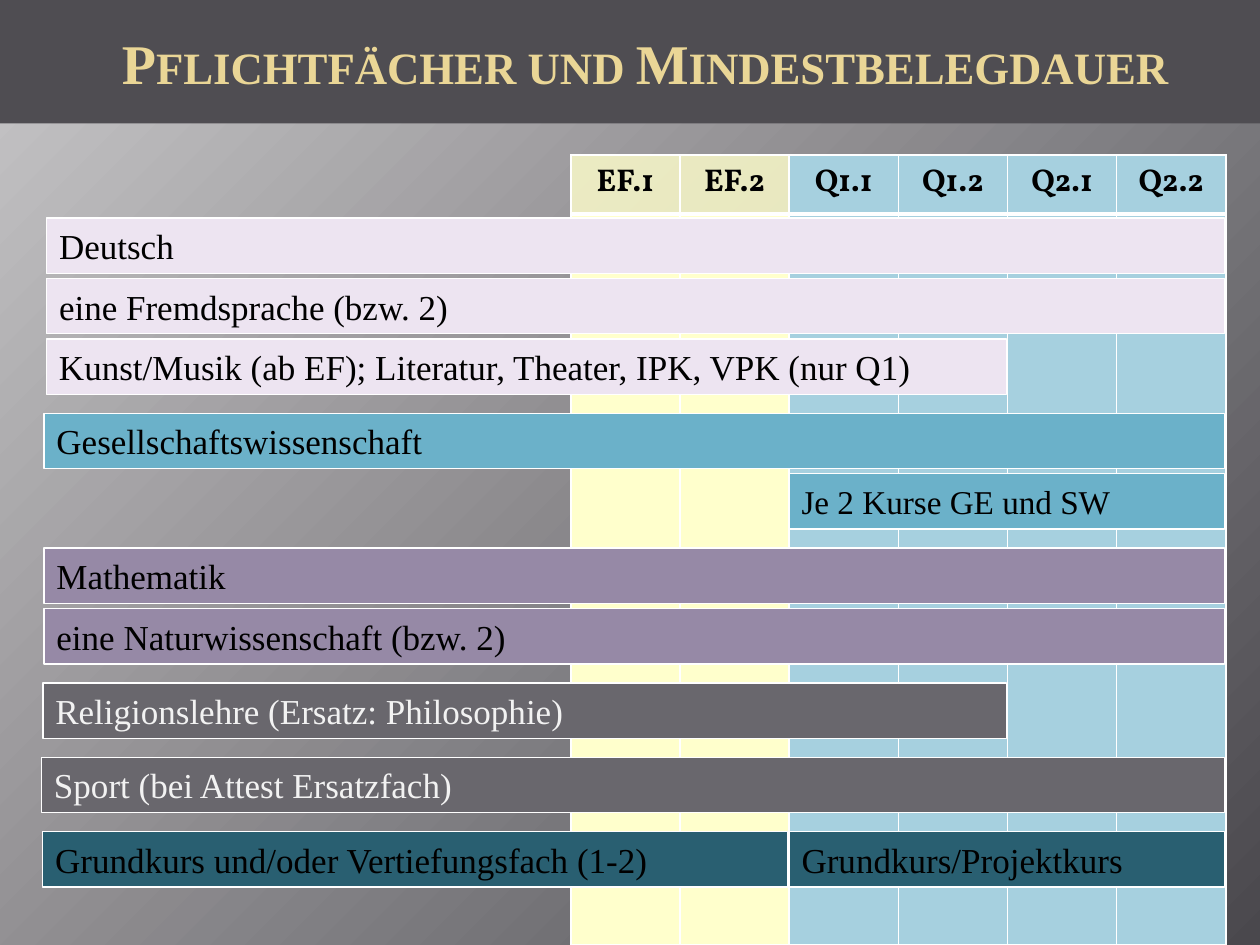
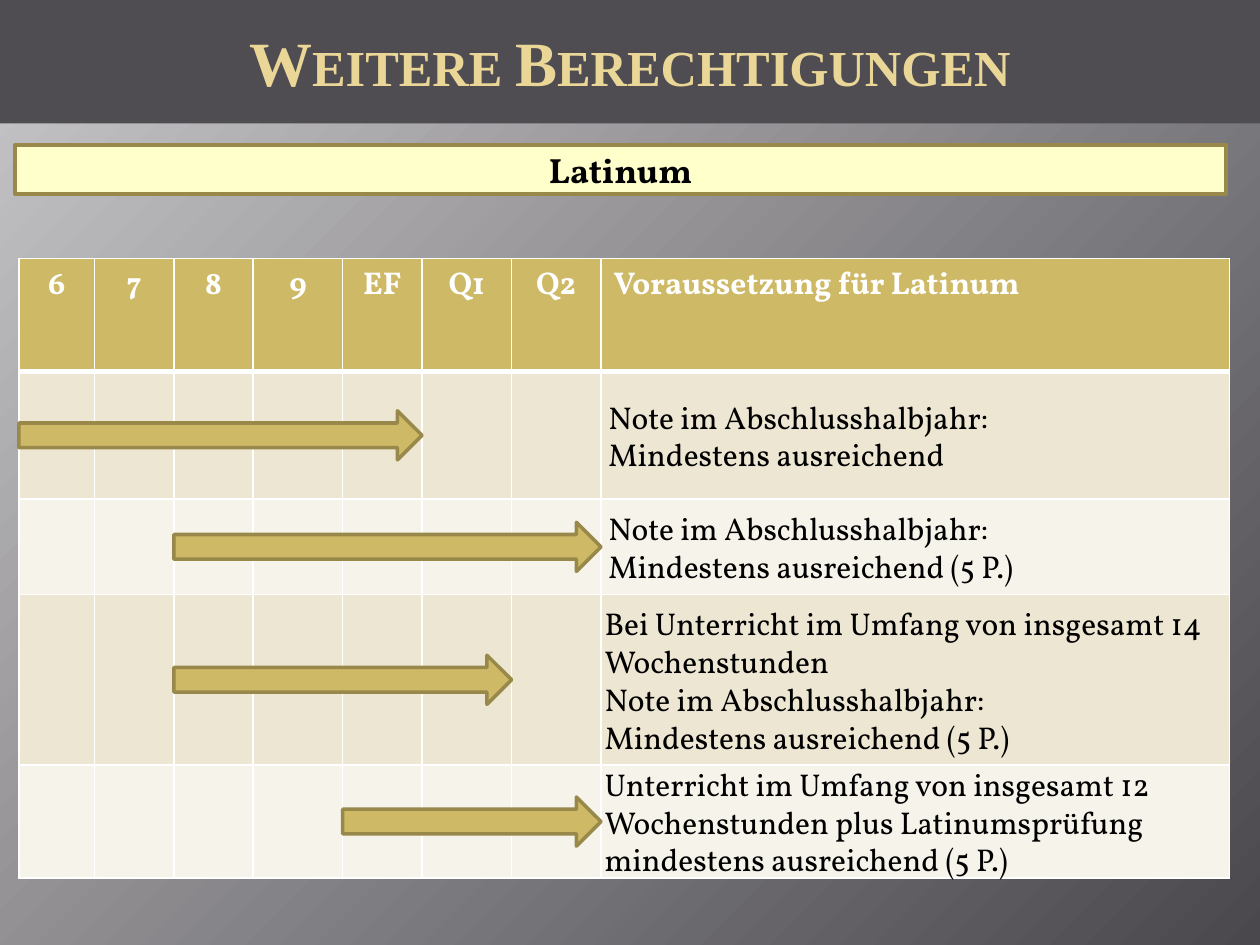
"""Build two slides on compulsory subjects and the Latinum."""
from itertools import accumulate

from lxml import etree
from pptx import Presentation, util as u
from pptx.dml.color import RGBColor
from pptx.enum import shapes, text
from pptx.oxml.ns import qn

W, H = 10, 7.5
SERIF, BOOK = "Times New Roman", "Vollkorn"
C = dict(light="C7C6C8", dark="4A484D", band="4F4D52", title="EAD696", white="FFFFFF", black="000000",
         pale="F2F2F2", cream="FFFFCC", sky="A6D0DF", lilac="EDE4F1", blue="6BB1C9", mauve="9689A6",
         grey="69676D", petrol="295F71", gold="CEB966", edge="98894B", sand="EDE6D3", ivory="F6F3EA")

TERMS = ["EF.1", "EF.2", "Q1.1", "Q1.2", "Q2.1", "Q2.2"]
TERM_FILLS = ["cream"] * 2 + ["sky"] * 4
TERM_LEFT, TERM_TOP, TERM_W = 4.53, 1.23, 5.2 / 6
TERM_ROWS = [0.47, 5.8]
BAR_TOP, BAR_H, BAR_STEP, GROUP_GAP = 1.73, 0.44, 0.48, 0.11

# group: left edge, fill, text colour, rows of (subject, first term or None, end term, size)
SUBJECTS = [
    (0.37, "lilac", "black", [
        [("Deutsch", None, 6, 20)],
        [("eine Fremdsprache (bzw. 2)", None, 6, 20)],
        [("Kunst/Musik (ab EF); Literatur, Theater, IPK, VPK (nur Q1)", None, 4, 20)]]),
    (0.35, "blue", "black", [
        [("Gesellschaftswissenschaft", None, 6, 20)],
        [("Je 2 Kurse GE und SW", 2, 6, 19)]]),
    (0.35, "mauve", "black", [
        [("Mathematik", None, 6, 20)],
        [("eine Naturwissenschaft (bzw. 2)", None, 6, 20)]]),
    (0.34, "grey", "pale", [[("Religionslehre (Ersatz: Philosophie)", None, 4, 20)]]),
    (0.33, "grey", "pale", [[("Sport (bei Attest Ersatzfach)", None, 6, 20)]]),
    (0.34, "petrol", "black", [
        [("Grundkurs und/oder Vertiefungsfach (1-2)", None, 2, 20),
         ("Grundkurs/Projektkurs", 2, 6, 20)]]),
]

YEARS = ["6", "7", "8", "9", "EF", "Q1", "Q2", "Voraussetzung für Latinum"]
YEAR_COLS = [0.6, 0.63, 0.63, 0.71, 0.63, 0.71, 0.71, 4.99]
YEAR_ROWS = [0.9, 1.01, 0.76, 1.35, 0.9]
YEAR_LEFT, YEAR_TOP, ARROW_H = 0.15, 2.05, 0.39
GRADE = "Note im Abschlusshalbjahr:"
COURSES = [
    (0, 5, 4.73, [GRADE, "Mindestens ausreichend"]),
    (2, 7, 4.73, [GRADE, "Mindestens ausreichend (5 P.)"]),
    (2, 6, 4.7, ["Bei Unterricht im Umfang von insgesamt 14 Wochenstunden", GRADE,
                 "Mindestens ausreichend (5 P.)"]),
    (4, 7, 4.7, ["Unterricht im Umfang von insgesamt 12 Wochenstunden plus Latinumsprüfung",
                 "mindestens ausreichend (5 P.)"]),
]


def rgb(name):
    return RGBColor.from_string(C[name])


def box(*lengths):
    return [u.Inches(v) for v in lengths]


def write(tf, lines, size, font, color, bold=False, align=text.PP_ALIGN.LEFT):
    tf.word_wrap = True
    tf.text = "\n".join(lines)
    for p in tf.paragraphs:
        p.alignment = align
        p.font.size, p.font.name, p.font.bold = u.Pt(size), font, bold
        p.font.color.rgb = rgb(color)


def shape(s, kind, place, fill, line, width):
    sp = s.shapes.add_shape(kind, *box(*place))
    sp.shadow.inherit = False
    sp.fill.solid()
    sp.fill.fore_color.rgb = rgb(fill)
    sp.line.color.rgb, sp.line.width = rgb(line), u.Pt(width)
    return sp


def set_background(prs):
    fill = prs.slide_master.background.fill
    fill.gradient()
    for stop, name in zip(fill.gradient_stops, ("light", "dark")):
        stop.color.rgb = rgb(name)
    grad = prs.slide_master.element.find(".//" + qn("a:gradFill"))
    grad.remove(grad.find(qn("a:lin")))
    path = etree.SubElement(grad, qn("a:path"), path="circle")
    etree.SubElement(path, qn("a:fillToRect"), r="100000", b="100000")


def titled_slide(prs, title, size, left_inset=0.05):
    s = prs.slides.add_slide(prs.slide_layouts[5])
    sp = s.shapes.title
    sp.left, sp.top, sp.width, sp.height = box(0, 0, W, 0.98)
    sp.fill.solid()
    sp.fill.fore_color.rgb = rgb("band")
    tf = sp.text_frame
    tf.auto_size = text.MSO_AUTO_SIZE.NONE
    tf.vertical_anchor = text.MSO_ANCHOR.MIDDLE
    tf.margin_left, tf.margin_top, tf.margin_right, tf.margin_bottom = box(left_inset, 0, 0.05, 0)
    write(tf, [title], size, SERIF, "title", True, text.PP_ALIGN.CENTER)
    tf.paragraphs[0].font._element.set("cap", "small")
    return s


def cell_borders(cell, row):
    widths = dict(lnL=1, lnR=1, lnT=3 if row == 1 else 1, lnB=3 if row == 0 else 1)
    for i, (tag, pt) in enumerate(widths.items()):
        ln = etree.Element(qn("a:" + tag), w=str(u.Pt(pt)))
        solid = etree.SubElement(ln, qn("a:solidFill"))
        etree.SubElement(solid, qn("a:srgbClr"), val=C["white"])
        cell._tc.get_or_add_tcPr().insert(i, ln)


def grid(s, left, top, cols, rows, heads, color, fill_of):
    frame = s.shapes.add_table(len(rows), len(cols), *box(left, top, sum(cols), sum(rows)))
    tbl = frame.table
    tbl.horz_banding = False
    for col, width in zip(tbl.columns, cols):
        col.width = u.Inches(width)
    for r, height in enumerate(rows):
        tbl.rows[r].height = u.Inches(height)
        for c, head in enumerate(heads):
            cell = tbl.cell(r, c)
            cell.fill.solid()
            cell.fill.fore_color.rgb = rgb(fill_of(r, c))
            cell_borders(cell, r)
            if r == 0:
                align = text.PP_ALIGN.CENTER if len(head) < 5 else text.PP_ALIGN.LEFT
                write(cell.text_frame, [head], 18, BOOK, color, True, align)
    return tbl


def subjects_slide(prs):
    s = titled_slide(prs, "Pflichtfächer und Mindestbelegdauer", 32, 0.29)
    tbl = grid(s, TERM_LEFT, TERM_TOP, [TERM_W] * 6, TERM_ROWS, TERMS, "black",
               lambda r, c: TERM_FILLS[c])
    for c in range(2):
        clr = tbl.cell(0, c)._tc.tcPr.find(qn("a:solidFill"))[0]
        etree.SubElement(clr, qn("a:alpha"), val="80000")
    y = BAR_TOP
    for left, fill, color, rows in SUBJECTS:
        for bars in rows:
            for subject, first, end, size in bars:
                x = left if first is None else TERM_LEFT + first * TERM_W
                right = TERM_LEFT + end * TERM_W - 0.01
                sp = shape(s, shapes.MSO_SHAPE.RECTANGLE, (x, y, right - x, BAR_H), fill, "white", 0.75)
                write(sp.text_frame, [subject], size, SERIF, color)
            y += BAR_STEP
        y += GROUP_GAP


def latinum_slide(prs):
    s = titled_slide(prs, "Weitere Berechtigungen", 36)
    sp = shape(s, shapes.MSO_SHAPE.RECTANGLE, (0.12, 1.15, 9.61, 0.39), "cream", "edge", 2)
    write(sp.text_frame, ["Latinum"], 20, BOOK, "black", True, text.PP_ALIGN.CENTER)
    grid(s, YEAR_LEFT, YEAR_TOP, YEAR_COLS, YEAR_ROWS, YEARS, "white",
         lambda r, c: "gold" if r == 0 else ("ivory", "sand")[r % 2])
    xs = list(accumulate(YEAR_COLS, initial=YEAR_LEFT))
    ys = list(accumulate(YEAR_ROWS, initial=YEAR_TOP))
    for row, (first, end, left, lines) in enumerate(COURSES, 1):
        top, height = ys[row], YEAR_ROWS[row]
        place = (xs[first], top + (height - ARROW_H) / 2, xs[end] - xs[first], ARROW_H)
        shape(s, shapes.MSO_SHAPE.RIGHT_ARROW, place, "gold", "edge", 2)
        tf = s.shapes.add_textbox(*box(left, top, 5.05, height)).text_frame
        tf.vertical_anchor = text.MSO_ANCHOR.MIDDLE
        write(tf, lines, 18, BOOK, "black")


def main():
    prs = Presentation()
    prs.slide_width, prs.slide_height = box(W, H)
    set_background(prs)
    subjects_slide(prs)
    latinum_slide(prs)
    prs.save("out.pptx")


if __name__ == "__main__":
    main()
